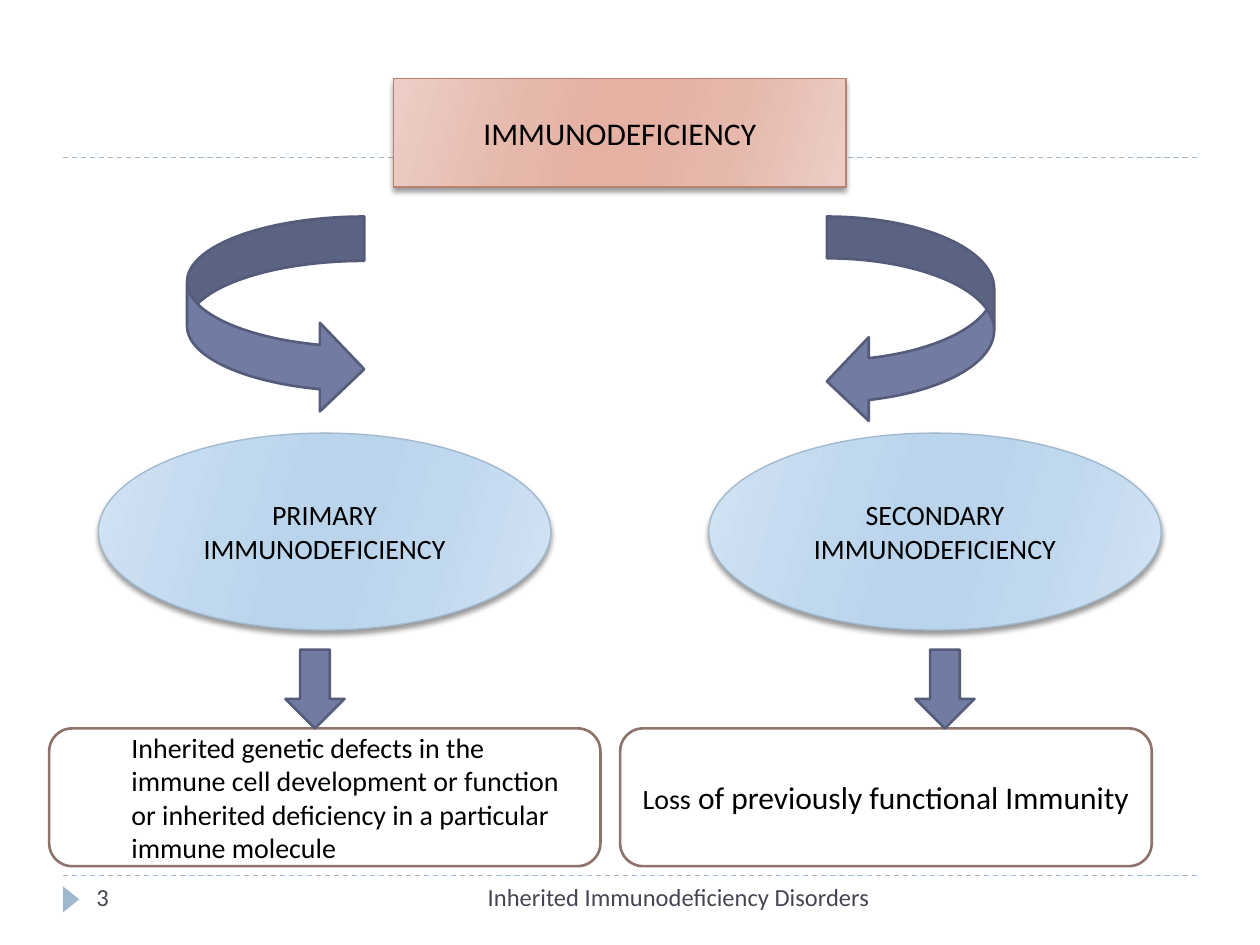
from dataclasses import dataclass

from pptx import Presentation
from pptx.dml.color import RGBColor
from pptx.enum.dml import MSO_LINE
from pptx.enum.shapes import MSO_CONNECTOR, MSO_SHAPE as Shape
from pptx.enum.text import MSO_ANCHOR as Anchor, PP_ALIGN as Align
from pptx.oxml.ns import qn
from pptx.oxml.xmlchemy import OxmlElement
from pptx.util import Pt


@dataclass(frozen=True)
class Theme:
    font: str = "Calibri"
    title_size: int = 18
    body_size: int = 16
    footer_size: int = 14
    text: str = "000000"
    footer: str = "464653"
    rule: str = "9FB8CD"
    arrow: str = "727CA3"
    arrow_edge: str = "545C79"
    box: str = "FFFFFF"
    box_edge: str = "8E736A"
    title_edge: str = "B88472"
    # Each gradient runs from the edge tone to the middle tone and back.
    title_tones: tuple = ("ECCEC6", "E6B8AC", "E4B1A3")
    type_tones: tuple = ("D3E3F2", "C0D8EE", "BAD4EC")


THEME = Theme()
GRADIENT_STOPS = (0, 30, 45, 55, 73, 100)


def color(code):
    return RGBColor.from_string(code)


def add_element(parent, tag, **attributes):
    child = OxmlElement(tag)
    for name, value in attributes.items():
        child.set(name, str(value))
    parent.append(child)
    return child


def add_rule(page, y):
    rule = page.shapes.add_connector(MSO_CONNECTOR.STRAIGHT, Pt(36), Pt(y), Pt(684), Pt(y))
    rule.line.color.rgb = color(THEME.rule)
    rule.line.width = Pt(0.75)
    rule.line.dash_style = MSO_LINE.DASH
    add_element(rule._element.spPr, "a:effectLst")


def add_plain_shape(page, kind, frame, fill, edge=None, edge_width=1.5):
    shape = page.shapes.add_shape(kind, *map(Pt, frame))
    shape.shadow.inherit = False
    shape.fill.solid()
    shape.fill.fore_color.rgb = color(fill)
    if edge:
        shape.line.color.rgb = color(edge)
        shape.line.width = Pt(edge_width)
    else:
        shape.line.fill.background()
    return shape


def add_glossy_shape(page, kind, frame, tones, edge):
    """Add a shape with a mirrored gradient and a soft shadow below it."""
    shape = add_plain_shape(page, kind, frame, tones[0], edge, 0.75)
    shape.fill.gradient()
    shape.fill.gradient_angle = 344
    properties = shape._element.spPr
    stops = properties.find(qn("a:gradFill")).find(qn("a:gsLst"))
    for stop in list(stops):
        stops.remove(stop)
    for position, tone in zip(GRADIENT_STOPS, tones + tones[::-1]):
        stop = add_element(stops, "a:gs", pos=position * 1000)
        add_element(stop, "a:srgbClr", val=tone)
    shadow = add_element(properties.find(qn("a:effectLst")), "a:outerShdw",
                         blurRad=Pt(3), dist=Pt(2), dir=90 * 60000, rotWithShape=0)
    shade = add_element(shadow, "a:srgbClr", val="000000")
    add_element(shade, "a:alpha", val=40000)
    return shape


def write(box, text, size, align=Align.CENTER, tone=THEME.text, anchor=Anchor.MIDDLE):
    frame = box.text_frame
    frame.word_wrap = True
    frame.vertical_anchor = anchor
    para = frame.paragraphs[0]
    para.text = text
    para.alignment = align
    para.font.name = THEME.font
    para.font.size = Pt(size)
    para.font.color.rgb = color(tone)
    return para


def add_footer(page, frame, text, align):
    box = page.shapes.add_textbox(*map(Pt, frame))
    write(box, text, THEME.footer_size, align, THEME.footer, Anchor.TOP)


def add_type(page, left, name):
    ellipse = add_glossy_shape(page, Shape.OVAL, (left, 247.5, 258.5, 112.5),
                               THEME.type_tones, THEME.rule)
    write(ellipse, name, THEME.body_size)


def add_arrow(page, kind, frame):
    add_plain_shape(page, kind, frame, THEME.arrow, THEME.arrow_edge)


def add_definition(page, left, width):
    return add_plain_shape(page, Shape.FLOWCHART_ALTERNATE_PROCESS,
                           (left, 416.25, width, 78.75), THEME.box, THEME.box_edge)


def main():
    deck = Presentation()
    deck.slide_width, deck.slide_height = Pt(720), Pt(540)
    page = deck.slides.add_slide(deck.slide_layouts[6])

    for y in (500.4, 90):
        add_rule(page, y)
    marker = add_plain_shape(page, Shape.ISOSCELES_TRIANGLE, (33.1, 509.2, 15, 9.4), THEME.rule)
    marker.rotation = 90

    title = add_glossy_shape(page, Shape.RECTANGLE, (225, 45, 258.5, 61.9),
                             THEME.title_tones, THEME.title_edge)
    write(title, "IMMUNODEFICIENCY", THEME.title_size)

    add_type(page, 56.25, "PRIMARY IMMUNODEFICIENCY")
    add_type(page, 405, "SECONDARY IMMUNODEFICIENCY")
    add_arrow(page, Shape.CURVED_RIGHT_ARROW, (106.9, 123.75, 101.25, 112.5))
    add_arrow(page, Shape.CURVED_LEFT_ARROW, (472.5, 123.75, 95.6, 118.1))

    primary = add_definition(page, 28.1, 315)
    primary.text_frame.margin_left = Pt(43.2)
    write(primary, "Inherited genetic defects in the immune cell development or function "
          "or inherited deficiency in a particular immune molecule",
          THEME.body_size, Align.LEFT)
    secondary = add_definition(page, 354.4, 303.75)
    para = write(secondary, "Loss", THEME.body_size)
    span = para.add_run()
    span.text = " of previously functional Immunity"
    span.font.size = Pt(THEME.title_size)

    for left in (163.1, 523.1):
        add_arrow(page, Shape.DOWN_ARROW, (left, 371.25, 33.75, 45))

    add_footer(page, (228, 500.4, 276, 28.8), "Inherited Immunodeficiency Disorders", Align.RIGHT)
    add_footer(page, (48, 500.4, 156, 28.8), "3", Align.LEFT)
    deck.save("out.pptx")


if __name__ == "__main__":
    main()
